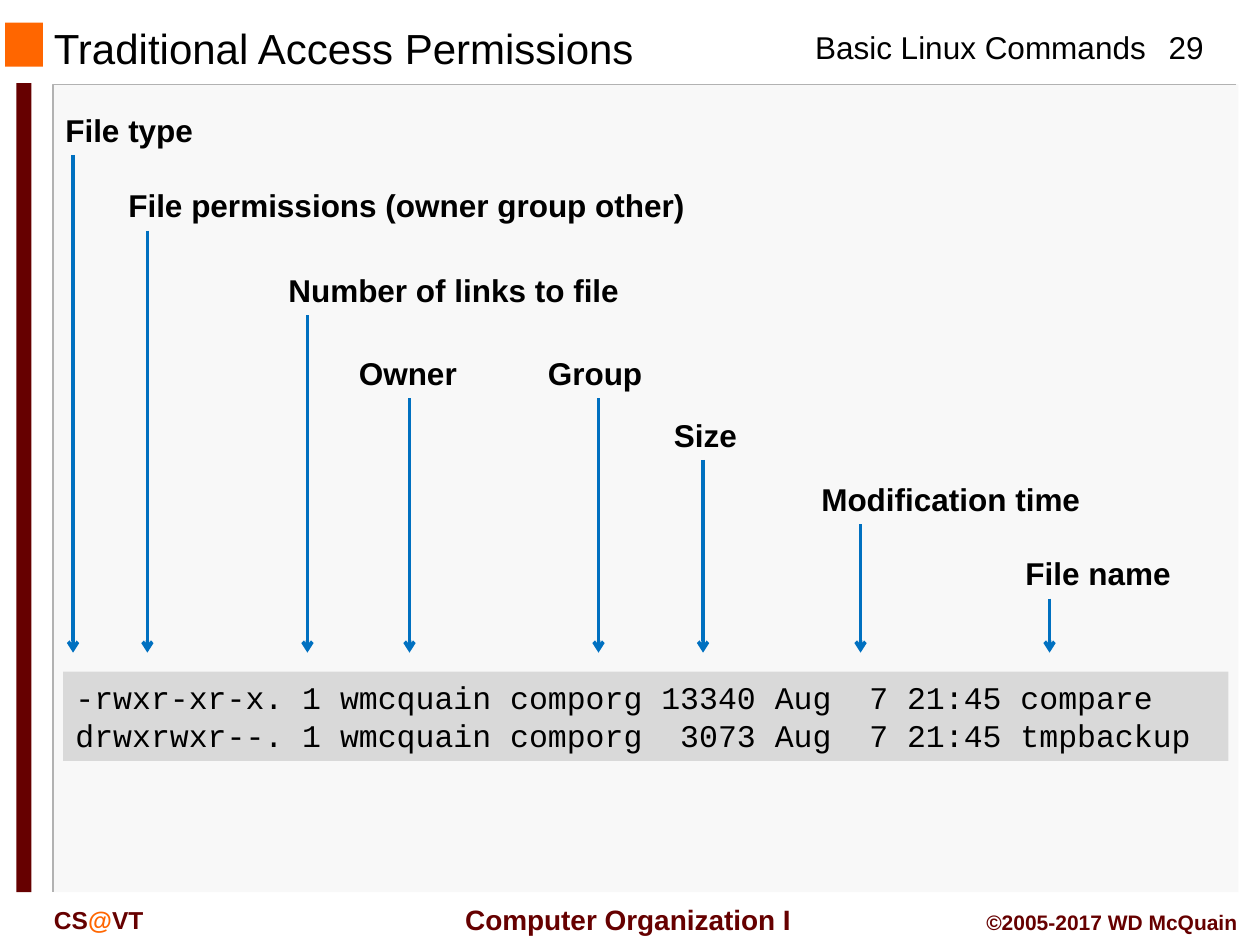
from pptx import Presentation
from pptx.dml.color import RGBColor
from pptx.enum.shapes import MSO_CONNECTOR, MSO_SHAPE
from pptx.enum.text import MSO_ANCHOR, PP_ALIGN
from pptx.oxml.ns import qn
from pptx.util import Inches, Pt
from lxml import etree

RECT, LINE = MSO_SHAPE.RECTANGLE, MSO_CONNECTOR.STRAIGHT
TOP, MID = MSO_ANCHOR.TOP, MSO_ANCHOR.MIDDLE
LEFT, MIDDLE, RIGHT = PP_ALIGN.LEFT, PP_ALIGN.CENTER, PP_ALIGN.RIGHT


class Theme:
    sans, mono = "Arial", "Courier New"
    black, maroon, orange = "000000", "660000", "FF6600"
    panel, edge, code, arrow = "F8F8F8", "B2B2B2", "D9D9D9", "0070C0"
    title, body, course, school, credit = 24, 18, 16, 14, 12


# Content: label, left, top, width, arrow x
FIELDS = [
    ("File type", 0.42, 0.83, 1.42, 0.58),
    ("File permissions (owner group other)", 0.92, 1.43, 4.81, 1.17),
    ("Number of links to file", 2.19, 2.10, 4.81, 2.44),
    ("Owner", 2.75, 2.76, 1.33, 3.25),
    ("Group", 4.25, 2.76, 1.33, 4.75),
    ("Size", 5.25, 3.25, 1.33, 5.58),
    ("Modification time", 6.42, 3.76, 2.65, 6.83),
    ("File name", 8.04, 4.35, 1.46, 8.33),
]
LISTING = [
    "-rwxr-xr-x. 1 wmcquain comporg 13340 Aug  7 21:45 compare",
    "drwxrwxr--. 1 wmcquain comporg  3073 Aug  7 21:45 tmpbackup",
]
# Header and footer: runs (text, colour), place, size, bold, align, anchor
FRAME = [
    ([("Traditional Access Permissions", Theme.black)],
     (0.33, 0.19, 6.33, 0.38), Theme.title, False, LEFT, MID),
    ([("Basic Linux Commands", Theme.black)],
     (6.37, 0.17, 2.85, 0.4), Theme.body, False, LEFT, TOP),
    ([("29", Theme.black)],
     (9.08, 0.17, 0.67, 0.4), Theme.body, False, MIDDLE, TOP),
    ([("CS", Theme.maroon), ("@", Theme.orange), ("VT", Theme.maroon)],
     (0.33, 7.13, 1.5, 0.33), Theme.school, True, LEFT, TOP),
    ([("Computer Organization I", Theme.maroon)],
     (3.53, 7.11, 2.91, 0.37), Theme.course, True, MIDDLE, MID),
    ([("©2005-2017 WD McQuain", Theme.maroon)],
     (7.42, 7.17, 2.5, 0.3), Theme.credit, True, RIGHT, TOP),
]
BLOCKS = [
    ((0.43, 0.67, 9.4, 6.41), Theme.panel),
    ((0.04, 0.18, 0.3, 0.35), Theme.orange),
    ((0.13, 0.66, 0.12, 6.42), Theme.maroon),
]
LABEL_H, TIP_Y = 0.4, 5.18


def color(code):
    return RGBColor.from_string(code)


def add_block(slide, place, fill):
    box = slide.shapes.add_shape(RECT, *map(Inches, place))
    box.shadow.inherit = False
    box.fill.solid()
    box.fill.fore_color.rgb = color(fill)
    box.line.fill.background()
    return box


def add_text(slide, runs, place, size, bold, align=LEFT, anchor=TOP):
    frame = slide.shapes.add_textbox(*map(Inches, place)).text_frame
    frame.word_wrap = True
    frame.vertical_anchor = anchor
    para = frame.paragraphs[0]
    para.alignment = align
    for text, tint in runs:
        run = para.add_run()
        run.text = text
        font = run.font
        font.name, font.size, font.bold = Theme.sans, Pt(size), bold
        font.color.rgb = color(tint)


def add_arrow(slide, x, top):
    line = slide.shapes.add_connector(
        LINE, Inches(x), Inches(top), Inches(x), Inches(TIP_Y))
    line.line.color.rgb = color(Theme.arrow)
    line.line.width = Pt(2)
    etree.SubElement(line.line._get_or_add_ln(), qn("a:tailEnd"), type="arrow")
    etree.SubElement(line._element.spPr, qn("a:effectLst"))


def add_edge(slide):
    pen = slide.shapes.build_freeform(Inches(9.81), Inches(0.67))
    corners = [(0.42, 0.67), (0.42, 7.08)]
    pen.add_line_segments([(Inches(x), Inches(y)) for x, y in corners],
                          close=False)
    edge = pen.convert_to_shape()
    edge.shadow.inherit = False
    edge.fill.background()
    edge.line.color.rgb = color(Theme.edge)
    edge.line.width = Pt(1)


def add_listing(slide):
    frame = add_block(slide, (0.5, 5.33, 9.25, 0.71), Theme.code).text_frame
    frame.word_wrap = True
    frame.vertical_anchor = TOP
    frame.text = "\n".join(LISTING)
    for para in frame.paragraphs:
        para.alignment = LEFT
        font = para.runs[0].font
        font.name, font.size = Theme.mono, Pt(Theme.body)
        font.color.rgb = color(Theme.black)


def main():
    deck = Presentation()
    deck.slide_width, deck.slide_height = Inches(10), Inches(7.5)
    slide = deck.slides.add_slide(deck.slide_layouts[6])

    # Panel, corner square and side bar
    for place, fill in BLOCKS:
        add_block(slide, place, fill)
    add_edge(slide)

    # Header and footer
    for item in FRAME:
        add_text(slide, *item)

    # Field labels with arrows down to the listing
    for label, left, top, width, x in FIELDS:
        add_text(slide, [(label, Theme.black)], (left, top, width, LABEL_H),
                 Theme.body, True)
        add_arrow(slide, x, top + LABEL_H)

    add_listing(slide)
    deck.save("out.pptx")


if __name__ == "__main__":
    main()
